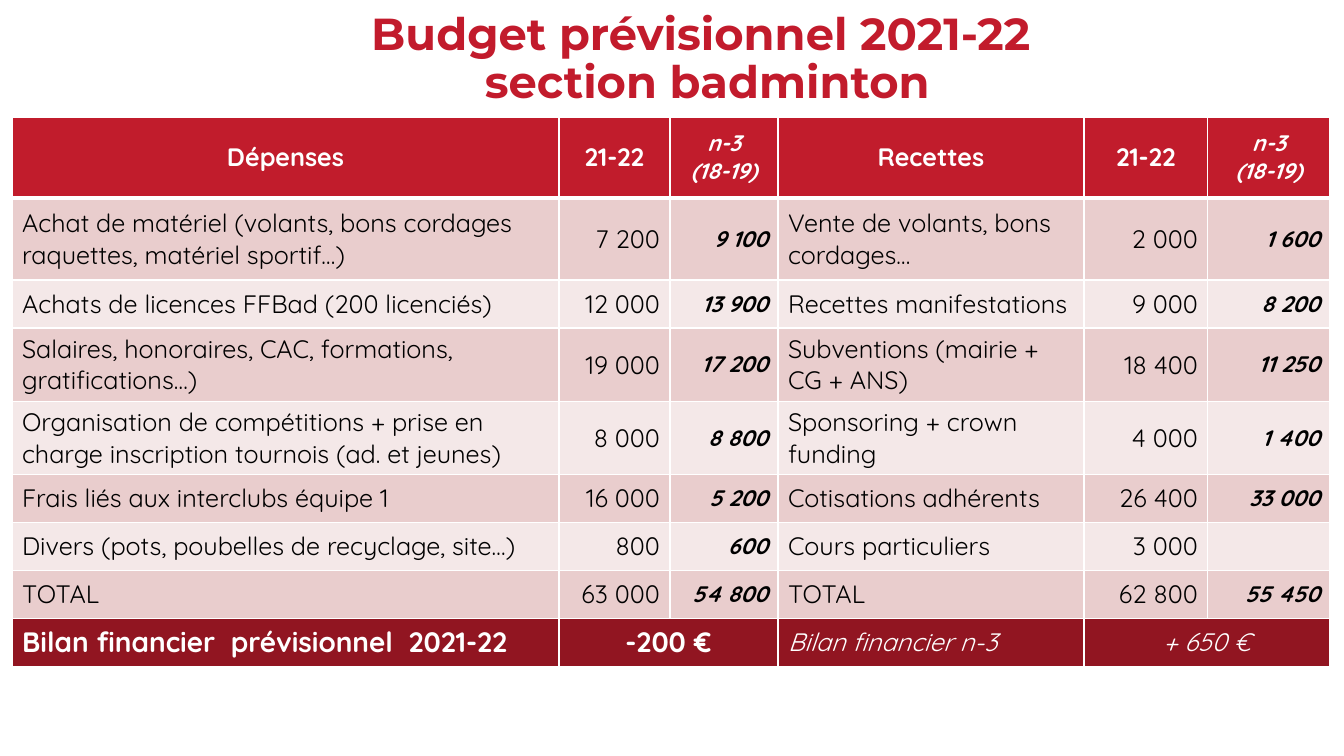
from dataclasses import dataclass

from lxml.etree import SubElement
from pptx import Presentation
from pptx.dml.color import RGBColor
from pptx.enum.text import MSO_ANCHOR, MSO_AUTO_SIZE, PP_ALIGN as ALIGN
from pptx.oxml.ns import qn
from pptx.table import Table, _Cell as Cell
from pptx.util import Emu, Pt

PX_PER_INCH = 100.8


@dataclass(frozen=True)
class Theme:
    title_font: str = "Montserrat"
    body_font: str = "Quicksand"
    title_red: str = "C21B2C"
    header_red: str = "C11C2C"
    dark_red: str = "911521"
    pink: str = "E9CDCD"
    pale_pink: str = "F4E8E8"
    white: str = "FFFFFF"
    black: str = "000000"
    title_size: int = 32
    result_size: int = 20
    body_size: int = 18
    small_size: int = 16
    thin_line: int = 1
    thick_line: int = 3


THEME = Theme()


@dataclass(frozen=True)
class TextStyle:
    size: int = THEME.body_size
    color: str = THEME.black
    bold: bool = False
    italic: bool = False
    align: ALIGN = ALIGN.LEFT
    font: str = THEME.body_font


@dataclass(frozen=True)
class BudgetLine:
    expense: str
    expense_now: str
    expense_before: str
    income: str
    income_now: str
    income_before: str

    def texts(self) -> tuple[str, ...]:
        return (self.expense, self.expense_now, self.expense_before,
                self.income, self.income_now, self.income_before)


TITLE = TextStyle(THEME.title_size, THEME.title_red, True, align=ALIGN.CENTER,
                  font=THEME.title_font)
HEAD = TextStyle(color=THEME.white, bold=True, align=ALIGN.CENTER)
HEAD_BEFORE = TextStyle(THEME.small_size, THEME.white, True, True, ALIGN.CENTER)
LABEL = TextStyle()
AMOUNT = TextStyle(align=ALIGN.RIGHT)
AMOUNT_BEFORE = TextStyle(THEME.small_size, bold=True, italic=True, align=ALIGN.RIGHT)
RESULT_LABEL = TextStyle(THEME.result_size, THEME.white, True)
RESULT = TextStyle(THEME.result_size, THEME.white, True, align=ALIGN.CENTER)
OLD_LABEL = TextStyle(color=THEME.white, italic=True)
OLD_RESULT = TextStyle(color=THEME.white, italic=True, align=ALIGN.CENTER)

HEAD_STYLES = (HEAD, HEAD, HEAD_BEFORE) * 2
BODY_STYLES = (LABEL, AMOUNT, AMOUNT_BEFORE) * 2
RESULT_STYLES = (RESULT_LABEL, RESULT, RESULT, OLD_LABEL, OLD_RESULT, OLD_RESULT)

HEADER = BudgetLine("Dépenses", "21-22", "n-3\n(18-19)",
                    "Recettes", "21-22", "n-3\n(18-19)")
BUDGET = (
    BudgetLine("Achat de matériel (volants, bons cordages raquettes, matériel sportif…)",
               "7 200", "9 100", "Vente de volants, bons cordages…", "2 000", "1 600"),
    BudgetLine("Achats de licences FFBad (200 licenciés)", "12 000", "13 900",
               "Recettes manifestations", "9 000", "8 200"),
    BudgetLine("Salaires, honoraires, CAC, formations, gratifications…)",
               "19 000", "17 200", "Subventions (mairie + CG + ANS)", "18 400", "11 250"),
    BudgetLine("Organisation de compétitions + prise en charge inscription tournois "
               "(ad. et jeunes)", "8 000", "8 800",
               "Sponsoring + crown funding", "4 000", "1 400"),
    BudgetLine("Frais liés aux interclubs équipe 1", "16 000", "5 200",
               "Cotisations adhérents", "26 400", "33 000"),
    BudgetLine("Divers (pots, poubelles de recyclage, site…)", "800", "600",
               "Cours particuliers", "3 000", ""),
    BudgetLine("TOTAL", "63 000", "54 800", "TOTAL", "62 800", "55 450"),
)
BALANCE = BudgetLine("Bilan financier  prévisionnel  2021-22", "-200 €", "",
                     "Bilan financier n-3", "+ 650 €", "")

COLUMN_WIDTHS = (547, 111, 108, 306, 124, 122)
ROW_HEIGHTS = (81, 82, 48, 73, 73, 48, 48, 48, 48)
MERGED_STARTS = (1, 4)


def px(n: int) -> Emu:
    return Emu(round(n * 914400 / PX_PER_INCH))


def add_run(p, text: str, style: TextStyle) -> None:
    r = p.add_run()
    r.text = text
    font = r.font
    font.name, font.size = style.font, Pt(style.size)
    font.bold, font.italic = style.bold, style.italic
    font.color.rgb = RGBColor.from_string(style.color)


def set_borders(cell: Cell, top: int, bottom: int) -> None:
    """Draw white lines round a cell, with widths in points."""
    tc_pr = cell._tc.get_or_add_tcPr()
    widths = {"a:lnL": THEME.thin_line, "a:lnR": THEME.thin_line,
              "a:lnT": top, "a:lnB": bottom}
    for i, (tag, width) in enumerate(widths.items()):
        ln = SubElement(tc_pr, qn(tag), w=str(Pt(width)))
        SubElement(SubElement(ln, qn("a:solidFill")), qn("a:srgbClr"), val=THEME.white)
        tc_pr.insert(i, ln)


def fill_row(table: Table, row: int, line: BudgetLine,
             styles: tuple[TextStyle, ...], fill: str) -> None:
    top = THEME.thick_line if row == 1 else THEME.thin_line
    bottom = THEME.thick_line if row == 0 else THEME.thin_line
    for col, (text, style) in enumerate(zip(line.texts(), styles)):
        cell = table.cell(row, col)
        cell.vertical_anchor = MSO_ANCHOR.MIDDLE
        cell.fill.solid()
        cell.fill.fore_color.rgb = RGBColor.from_string(fill)
        set_borders(cell, top, bottom)
        tf = cell.text_frame
        for i, part in enumerate(text.split("\n") if text else ()):
            p = tf.add_paragraph() if i else tf.paragraphs[0]
            p.alignment = style.align
            add_run(p, part, style)


def add_title(slide) -> None:
    sp = slide.shapes.title
    sp.left, sp.top, sp.width, sp.height = px(93), px(7), px(1229), px(106)
    tf = sp.text_frame
    tf.word_wrap = True
    tf.auto_size = MSO_AUTO_SIZE.NONE
    tf.vertical_anchor = MSO_ANCHOR.MIDDLE
    p = tf.paragraphs[0]
    p.alignment, p.line_spacing = TITLE.align, 0.9
    add_run(p, "Budget prévisionnel 2021-22 ", TITLE)
    p.add_line_break()
    add_run(p, "section badminton", TITLE)


def add_budget_table(slide) -> None:
    table = slide.shapes.add_table(
        len(ROW_HEIGHTS), len(COLUMN_WIDTHS), px(12), px(117),
        px(sum(COLUMN_WIDTHS)), px(sum(ROW_HEIGHTS))).table
    for column, width in zip(table.columns, COLUMN_WIDTHS):
        column.width = px(width)
    for row, height in zip(table.rows, ROW_HEIGHTS):
        row.height = px(height)

    last = len(ROW_HEIGHTS) - 1
    fill_row(table, 0, HEADER, HEAD_STYLES, THEME.header_red)
    for row, line in enumerate(BUDGET, start=1):
        fill_row(table, row, line, BODY_STYLES, THEME.pink if row % 2 else THEME.pale_pink)
    fill_row(table, last, BALANCE, RESULT_STYLES, THEME.dark_red)
    for col in MERGED_STARTS:
        table.cell(last, col).merge(table.cell(last, col + 1))


def main() -> None:
    prs = Presentation()
    prs.slide_width, prs.slide_height = px(1344), px(756)
    slide = prs.slides.add_slide(prs.slide_layouts.get_by_name("Title Only"))
    add_title(slide)
    add_budget_table(slide)
    prs.save("out.pptx")


if __name__ == "__main__":
    main()
